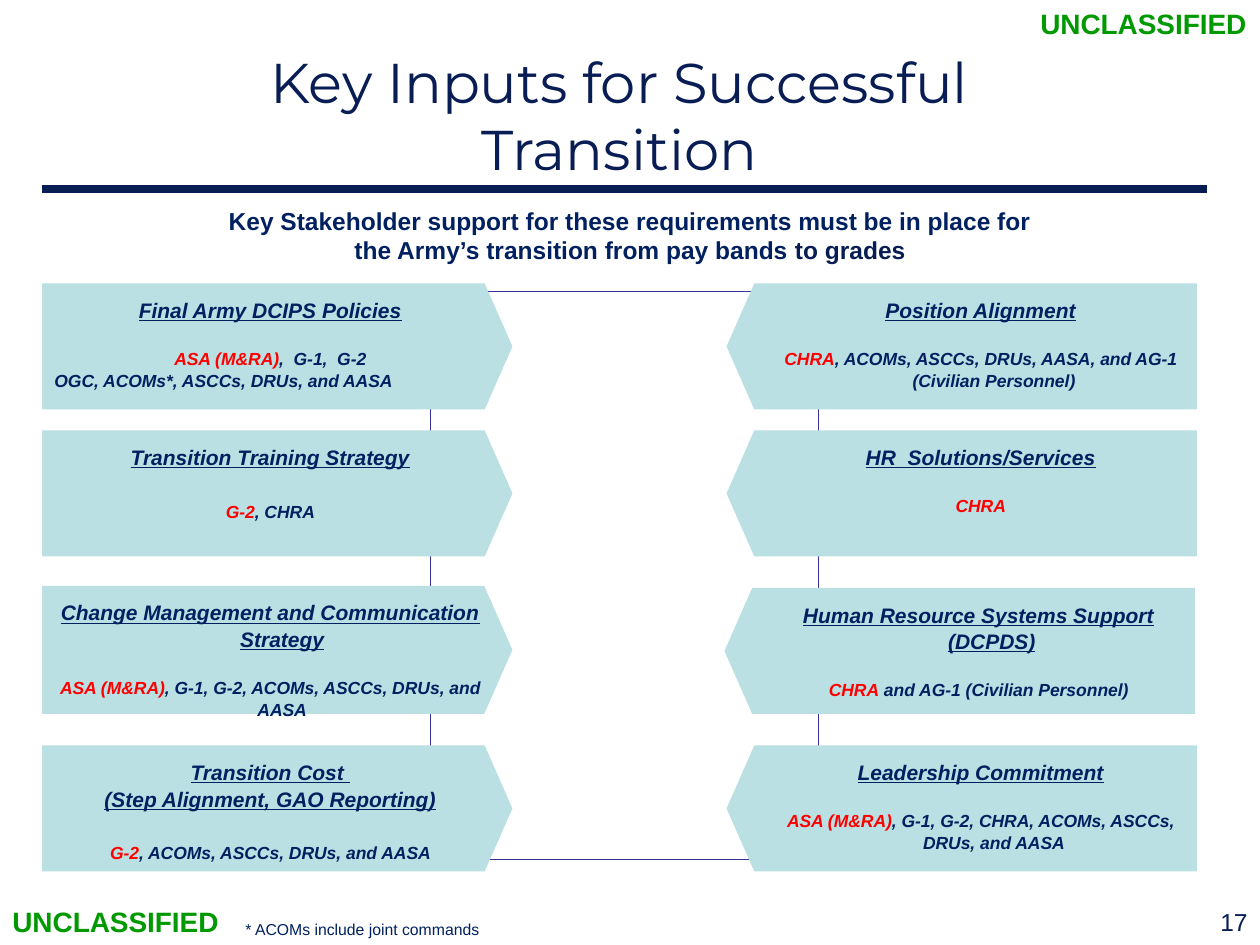
"""Build the slide on key inputs for a successful transition."""
from dataclasses import dataclass

from pptx import Presentation
from pptx import util as u
from pptx.dml.color import RGBColor
from pptx.enum import shapes, text
from pptx.oxml.ns import qn
from lxml import etree

NAVY = RGBColor(0x08, 0x1D, 0x54)
INK = RGBColor(0x00, 0x20, 0x60)
RED = RGBColor(0xFF, 0x00, 0x00)
GREEN = RGBColor(0x00, 0x99, 0x00)
TEAL = RGBColor(0xBB, 0xE0, 0xE3)
INDIGO = RGBColor(0x33, 0x33, 0x99)

COLUMNS, ROWS = 120, 90
PANEL_W, PANEL_H = 44.8, 12
CENTER, LEFT, RIGHT = text.PP_ALIGN.CENTER, text.PP_ALIGN.LEFT, text.PP_ALIGN.RIGHT

prs = Presentation()
prs.slide_width, prs.slide_height = u.Inches(10), u.Inches(7.5)
slide = prs.slides.add_slide(prs.slide_layouts[6])


@dataclass
class Box:
    """A rectangle in grid columns and rows."""
    col: float
    row: float
    cols: float
    rows: float

    def place(self) -> tuple[int, int, int, int]:
        """Return left, top, width and height as lengths."""
        dx, dy = prs.slide_width / COLUMNS, prs.slide_height / ROWS
        return (round(self.col * dx), round(self.row * dy),
                round(self.cols * dx), round(self.rows * dy))


@dataclass
class Label:
    """A plain text box; each run is a wording and its colour."""
    box: Box
    runs: list[tuple[str, RGBColor]]
    size: float
    align: text.PP_ALIGN = CENTER
    font: str = "Arial"
    bold: bool = False
    wrap: bool = True
    anchor: text.MSO_ANCHOR = text.MSO_ANCHOR.TOP


@dataclass
class Panel:
    """A pentagon with headings, a lead owner and supporting owners."""
    col: float
    row: float
    headings: list[str]
    lead: str
    support: str = ""
    extra: str = ""
    gap: float = 13.5
    rows: float = PANEL_H
    flipped: bool = False


def add_runs(p, runs: list[tuple[str, RGBColor]]) -> None:
    """Append coloured runs to a paragraph."""
    for words, color in runs:
        r = p.add_run()
        r.text = words
        r.font.color.rgb = color


def add_label(label: Label) -> None:
    """Draw a text box."""
    tf = slide.shapes.add_textbox(*label.box.place()).text_frame
    tf.word_wrap = label.wrap
    tf.vertical_anchor = label.anchor
    p = tf.paragraphs[0]
    p.alignment = label.align
    p.font.name, p.font.size, p.font.bold = label.font, u.Pt(label.size), label.bold
    add_runs(p, label.runs)


def add_panel(panel: Panel) -> None:
    """Draw a pentagon with its text."""
    box = Box(panel.col, panel.row, PANEL_W, panel.rows)
    sp = slide.shapes.add_shape(shapes.MSO_SHAPE.PENTAGON, *box.place())
    sp.adjustments[0] = 0.22
    sp.shadow.inherit = False
    sp.fill.solid()
    sp.fill.fore_color.rgb = TEAL
    sp.line.fill.background()
    if panel.flipped:
        sp._element.spPr.find(qn("a:xfrm")).set("flipH", "1")
    tf = sp.text_frame
    tf.word_wrap = True
    tf.vertical_anchor = text.MSO_ANCHOR.TOP
    tf.margin_left = tf.margin_right = tf.margin_top = tf.margin_bottom = u.Inches(0.1)

    lines = [([(words, INK)], 12, CENTER, 0) for words in panel.headings]
    owners = [(panel.lead, RED)] + ([(panel.support, INK)] if panel.support else [])
    lines.append((owners, 10, CENTER, panel.gap))
    if panel.extra:
        lines.append(([(panel.extra, INK)], 10, LEFT, 0))
    margin, indent = (0.4, -0.21) if panel.flipped else (0.19, -0.19)
    for i, (runs, size, align, before) in enumerate(lines):
        p = tf.paragraphs[0] if i == 0 else tf.add_paragraph()
        pPr = p._p.get_or_add_pPr()
        pPr.set("marL", str(u.Inches(margin)))
        pPr.set("indent", str(u.Inches(indent)))
        p.alignment, p.line_spacing = align, 1.06
        if before:
            p.space_before = u.Pt(before)
        p.font.name, p.font.size = "Arial", u.Pt(size)
        p.font.bold = p.font.italic = True
        p.font.underline = size == 12
        add_runs(p, runs)


def add_rule(box: Box) -> None:
    """Draw the rule under the title."""
    x, y, w, h = box.place()
    rule = slide.shapes.add_connector(shapes.MSO_CONNECTOR.STRAIGHT, x, y, x + w, y + h)
    rule.line.color.rgb = NAVY
    rule.line.width = u.Pt(4.5)
    etree.SubElement(rule._element.spPr, qn("a:effectLst"))


def add_frame(box: Box) -> None:
    """Draw the thin frame that links the panels."""
    frame = slide.shapes.add_shape(shapes.MSO_SHAPE.RECTANGLE, *box.place())
    frame.shadow.inherit = False
    frame.fill.background()
    frame.line.color.rgb = INDIGO
    frame.line.width = u.Pt(0.5)


LEFT_COL, RIGHT_COL = 4, 69.2
PANELS = [
    Panel(LEFT_COL, 27, ["Final Army DCIPS Policies"], "ASA (M&RA)", ",  G-1,  G-2",
          extra="OGC, ACOMs*, ASCCs, DRUs, and AASA"),
    Panel(LEFT_COL, 41, ["Transition Training Strategy"], "G-2", ", CHRA", gap=17),
    Panel(LEFT_COL, 55.8, ["Change Management and Communication Strategy"],
          "ASA (M&RA)", ", G-1, G-2, ACOMs, ASCCs, DRUs, and AASA", rows=12.2),
    Panel(LEFT_COL, 71, ["Transition Cost ", "(Step Alignment, GAO Reporting)"],
          "G-2", ", ACOMs, ASCCs, DRUs, and AASA", gap=17),
    Panel(RIGHT_COL, 27, ["Position Alignment"], "CHRA",
          ", ACOMs, ASCCs, DRUs, AASA, and AG-1 (Civilian Personnel)", flipped=True),
    Panel(RIGHT_COL, 41, ["HR  Solutions/Services"], "CHRA", flipped=True),
    Panel(69, 56, ["Human Resource Systems Support (DCPDS)"], "CHRA",
          " and AG-1 (Civilian Personnel)", flipped=True),
    Panel(RIGHT_COL, 71, ["Leadership Commitment"], "ASA (M&RA)",
          ", G-1, G-2, CHRA, ACOMs, ASCCs, DRUs, and AASA", flipped=True),
]
MARKING = [("UNCLASSIFIED", GREEN)]
LABELS = [
    Label(Box(23, 3.6, 72, 14.6), [("Key Inputs for Successful Transition", NAVY)], 32,
          font="Montserrat", anchor=text.MSO_ANCHOR.MIDDLE),
    Label(Box(19, 19, 82, 6.8),
          [("Key Stakeholder support for these requirements must be in place for "
            "the Army’s transition from pay bands ", INK), ("to grades", NAVY)],
          14, bold=True),
    Label(Box(92, 85.8, 28, 4.2), [("17", NAVY)], 14, RIGHT),
    Label(Box(21, 87, 27, 3), [("* ACOMs include joint commands", INK)], 9),
    Label(Box(0, 85.6, 22.1, 4.4), MARKING, 16, LEFT, bold=True, wrap=False),
    Label(Box(97.9, 0, 22.1, 4.4), MARKING, 16, LEFT, bold=True, wrap=False),
]

add_rule(Box(4, 18, 111, 0))
add_frame(Box(41, 27.8, 37, 54.1))
for item in PANELS:
    add_panel(item)
for item in LABELS:
    add_label(item)
prs.save("out.pptx")
